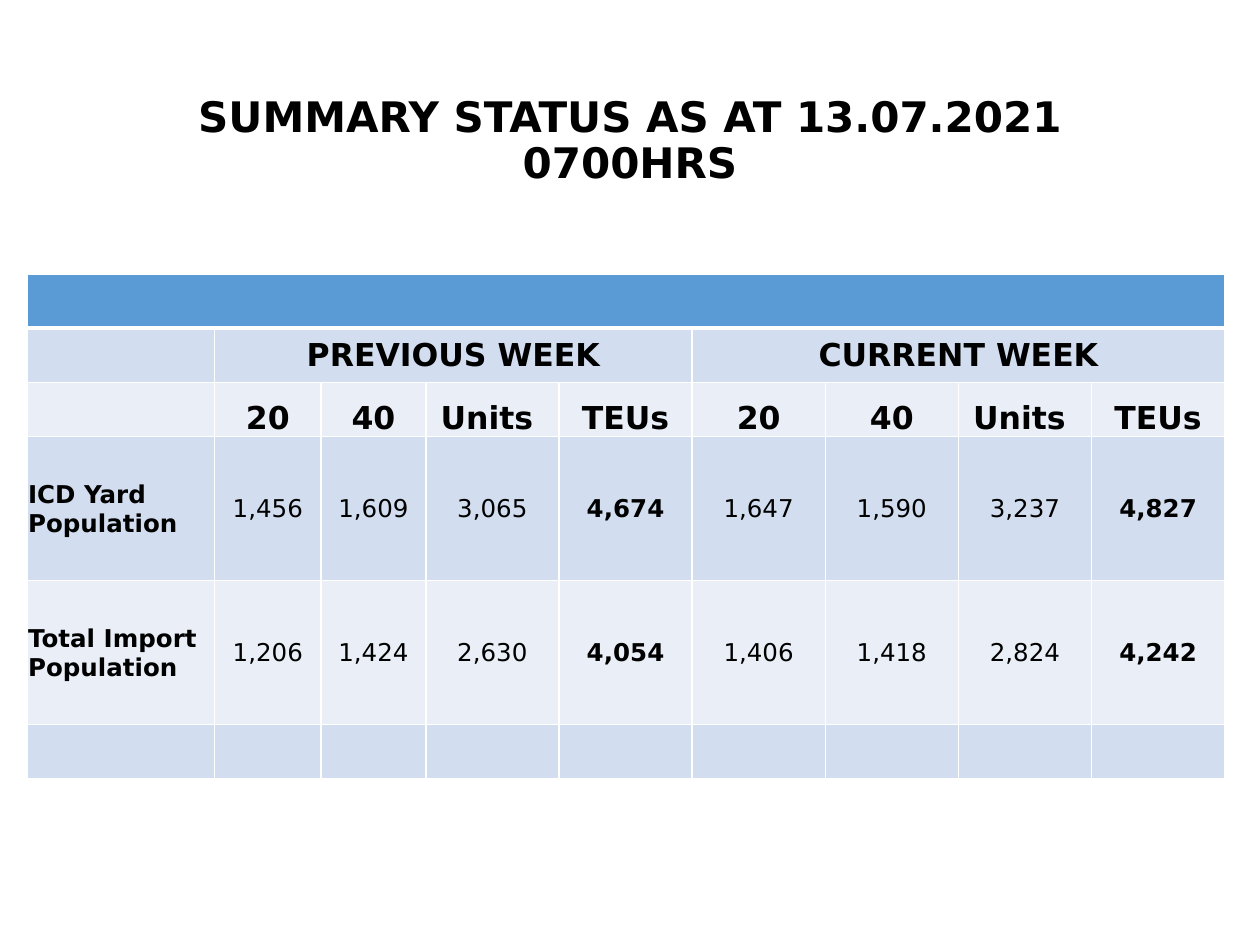
from dataclasses import dataclass

from lxml.etree import SubElement
from pptx import Presentation
from pptx.dml.color import RGBColor
from pptx.enum.text import MSO_ANCHOR as Anchor, MSO_AUTO_SIZE as AutoSize, PP_ALIGN as Align
from pptx.oxml.ns import qn
from pptx.util import Pt


@dataclass(frozen=True)
class Theme:
    """Colours, font and type sizes of the slide."""
    font: str = "DejaVu Sans"
    ink: str = "000000"
    white: str = "FFFFFF"
    banner: str = "5B9BD5"
    bands: tuple = ("D2DEEF", "EAEFF7")
    title_size: int = 24
    heading_size: int = 18
    body_size: int = 14


THEME = Theme()
TITLE_BOX = (49.7, 28.8, 620.6, 104.4)
TABLE_BOX = (15.4, 156.5, 684.6, 288.6)
COLUMN_WIDTHS = [107.2, 61, 59.8] + [76.1] * 6
ROW_HEIGHTS = [31, 31, 31, 82.3, 82.3, 31]
WEEKS = ["PREVIOUS WEEK", "CURRENT WEEK"]
MEASURES = ["20", "40", "Units ", "TEUs"]
POPULATIONS = [
    ["ICD Yard Population", "1,456", "1,609", "3,065", "4,674", "1,647", "1,590", "3,237", "4,827"],
    ["Total Import Population", "1,206", "1,424", "2,630", "4,054", "1,406", "1,418", "2,824", "4,242"],
]


def write_text(frame, text, size, bold=False, align=Align.CENTER, spacing=None):
    """Put one formatted paragraph into a text frame."""
    paragraph = frame.paragraphs[0]
    paragraph.alignment = align
    if spacing:
        paragraph.line_spacing = spacing
    run = paragraph.add_run()
    run.text = text
    run.font.name = THEME.font
    run.font.size = Pt(size)
    run.font.bold = bold
    run.font.color.rgb = RGBColor.from_string(THEME.ink)


def style_cell(cell, fill, top=1, bottom=1):
    """Give a cell white borders and a solid fill."""
    properties = cell._tc.get_or_add_tcPr()
    for side, width in (("L", 1), ("R", 1), ("T", top), ("B", bottom)):
        border = SubElement(properties, qn(f"a:ln{side}"), w=str(Pt(width)))
        solid = SubElement(border, qn("a:solidFill"))
        SubElement(solid, qn("a:srgbClr"), val=THEME.white)
    cell.fill.solid()
    cell.fill.fore_color.rgb = RGBColor.from_string(fill)


def write_cell(cell, text, size, anchor=Anchor.MIDDLE, **text_format):
    """Write tightly inset text into a table cell."""
    cell.margin_left = cell.margin_right = cell.margin_top = Pt(0.7)
    cell.margin_bottom = Pt(0)
    cell.vertical_anchor = anchor
    write_text(cell.text_frame, text, size, **text_format)


def place_title(slide, box):
    """Place the slide title in the given box."""
    title = slide.shapes.title
    title.left, title.top, title.width, title.height = map(Pt, box)
    frame = title.text_frame
    frame.word_wrap = True
    frame.auto_size = AutoSize.NONE
    frame.vertical_anchor = Anchor.MIDDLE
    write_text(frame, "SUMMARY STATUS AS AT 13.07.2021 0700HRS", THEME.title_size,
               bold=True, spacing=0.9)


def place_summary(slide, box):
    """Place the weekly population table in the given box."""
    table = slide.shapes.add_table(len(ROW_HEIGHTS), len(COLUMN_WIDTHS), *map(Pt, box)).table
    for column, width in zip(table.columns, COLUMN_WIDTHS):
        column.width = Pt(width)
    for index, (row, height) in enumerate(zip(table.rows, ROW_HEIGHTS)):
        row.height = Pt(height)
        fill = THEME.bands[(index - 1) % 2] if index else THEME.banner
        for cell in row.cells:
            style_cell(cell, fill, top=3 if index == 1 else 1, bottom=1 if index else 3)

    table.cell(0, 0).merge(table.cell(0, len(COLUMN_WIDTHS) - 1))
    span = len(MEASURES)
    for week_index, week in enumerate(WEEKS):
        first = 1 + week_index * span
        table.cell(1, first).merge(table.cell(1, first + span - 1))
        write_cell(table.cell(1, first), week, THEME.heading_size, bold=True)
        for offset, measure in enumerate(MEASURES):
            write_cell(table.cell(2, first + offset), measure, THEME.heading_size,
                       anchor=Anchor.BOTTOM, bold=True)

    for row_index, population in enumerate(POPULATIONS, start=3):
        for column_index, value in enumerate(population):
            write_cell(table.cell(row_index, column_index), value, THEME.body_size,
                       bold=column_index % span == 0,
                       align=Align.CENTER if column_index else Align.LEFT)


def main():
    """Build and save the summary slide."""
    deck = Presentation()
    deck.slide_width, deck.slide_height = Pt(720), Pt(540)
    slide = deck.slides.add_slide(deck.slide_layouts[5])
    place_title(slide, TITLE_BOX)
    place_summary(slide, TABLE_BOX)
    deck.save("out.pptx")


if __name__ == "__main__":
    main()
